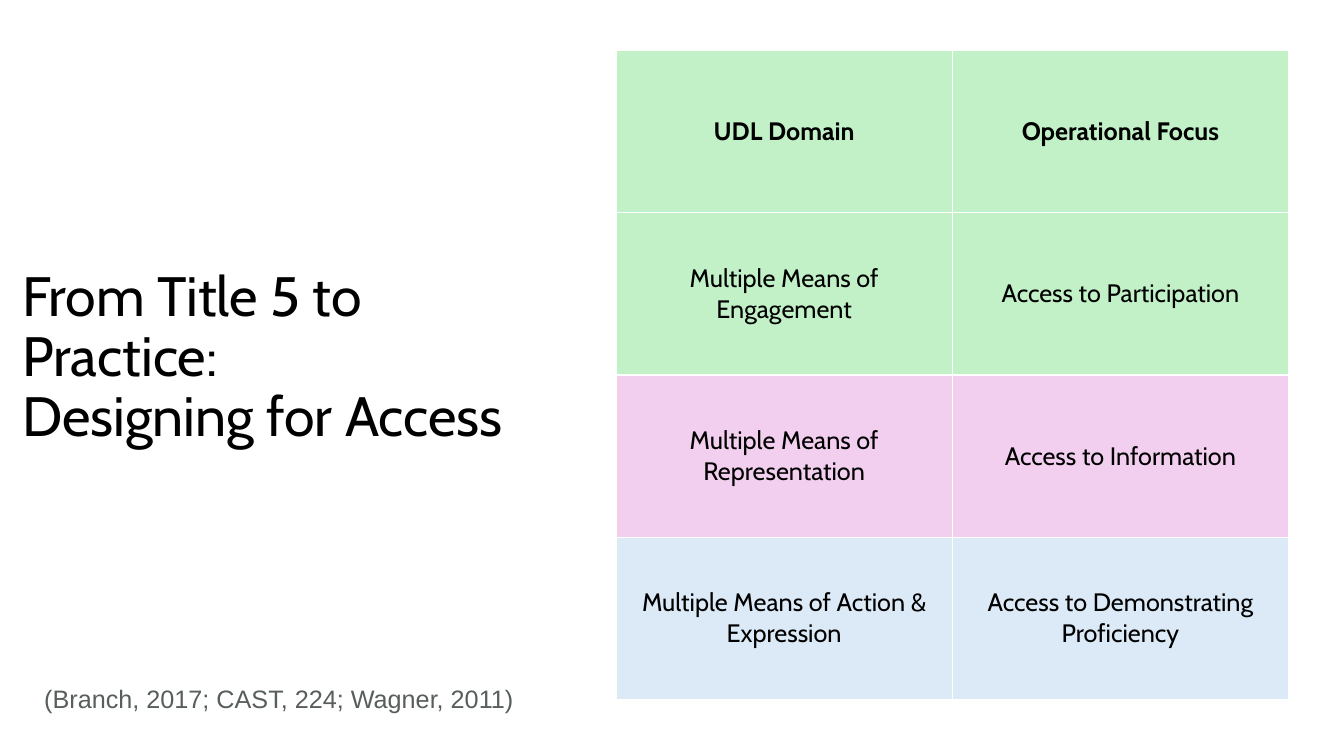
from pptx import Presentation
from pptx.dml.color import RGBColor
from pptx.enum.text import MSO_ANCHOR, MSO_AUTO_SIZE, PP_ALIGN
from pptx.util import Pt

PX = 9144
MIDDLE = MSO_ANCHOR.MIDDLE
FIXED = MSO_AUTO_SIZE.NONE
LEFT = PP_ALIGN.LEFT
CENTER = PP_ALIGN.CENTER

COLORS = {
    "ink": "000000",
    "gray": "575E5C",
    "green": "C2F1C8",
    "pink": "F2CFEE",
    "blue": "DCEAF7",
}

FORMATS = {
    "title": {"name": "Cabin", "size": Pt(39.6), "bold": False},
    "head": {"name": "Cabin", "size": Pt(18), "bold": True},
    "cell": {"name": "Cabin", "size": Pt(18), "bold": False},
    "cite": {"name": "Arial", "size": Pt(18), "bold": False},
}

TITLE = "From Title 5 to Practice:\nDesigning for Access"
CITE = "(Branch, 2017; CAST, 224; Wagner, 2011)"
ROWS = [
    ("head", "green", "UDL Domain", "Operational Focus"),
    ("cell", "green", "Multiple Means of Engagement", "Access to Participation"),
    ("cell", "pink", "Multiple Means of Representation", "Access to Information"),
    ("cell", "blue", "Multiple Means of Action & Expression",
     "Access to Demonstrating Proficiency"),
]


def scale(box):
    return [n * PX for n in box]


def color(key):
    return RGBColor.from_string(COLORS[key])


def write(frame, text, style, ink, align):
    para = frame.paragraphs[0]
    para.text = text
    para.alignment = align
    for run in para.runs:
        for key, value in FORMATS[style].items():
            setattr(run.font, key, value)
        run.font.color.rgb = color(ink)
    return para


def add_title(slide, box):
    title = slide.shapes.title
    title.left, title.top, title.width, title.height = scale(box)
    frame = title.text_frame
    frame.word_wrap = True
    frame.auto_size = FIXED
    frame.vertical_anchor = MIDDLE
    write(frame, TITLE, "title", "ink", LEFT).line_spacing = 0.9


def add_grid(slide, box):
    table = slide.shapes.add_table(len(ROWS), 2, *scale(box)).table
    for row, (style, fill, *texts) in enumerate(ROWS):
        for col, text in enumerate(texts):
            cell = table.cell(row, col)
            cell.fill.solid()
            cell.fill.fore_color.rgb = color(fill)
            cell.vertical_anchor = MIDDLE
            write(cell.text_frame, text, style, "ink", CENTER)


def add_cite(slide, box):
    frame = slide.shapes.add_textbox(*scale(box)).text_frame
    frame.word_wrap = True
    write(frame, CITE, "cite", "gray", LEFT)


def main():
    deck = Presentation()
    deck.slide_width, deck.slide_height = scale((1333, 750))
    slide = deck.slides.add_slide(deck.slide_layouts[5])
    add_title(slide, (12, 288, 557, 135))
    add_grid(slide, (611, 50, 667, 644))
    add_cite(slide, (34, 673, 512, 40))
    deck.save("out.pptx")


if __name__ == "__main__":
    main()
